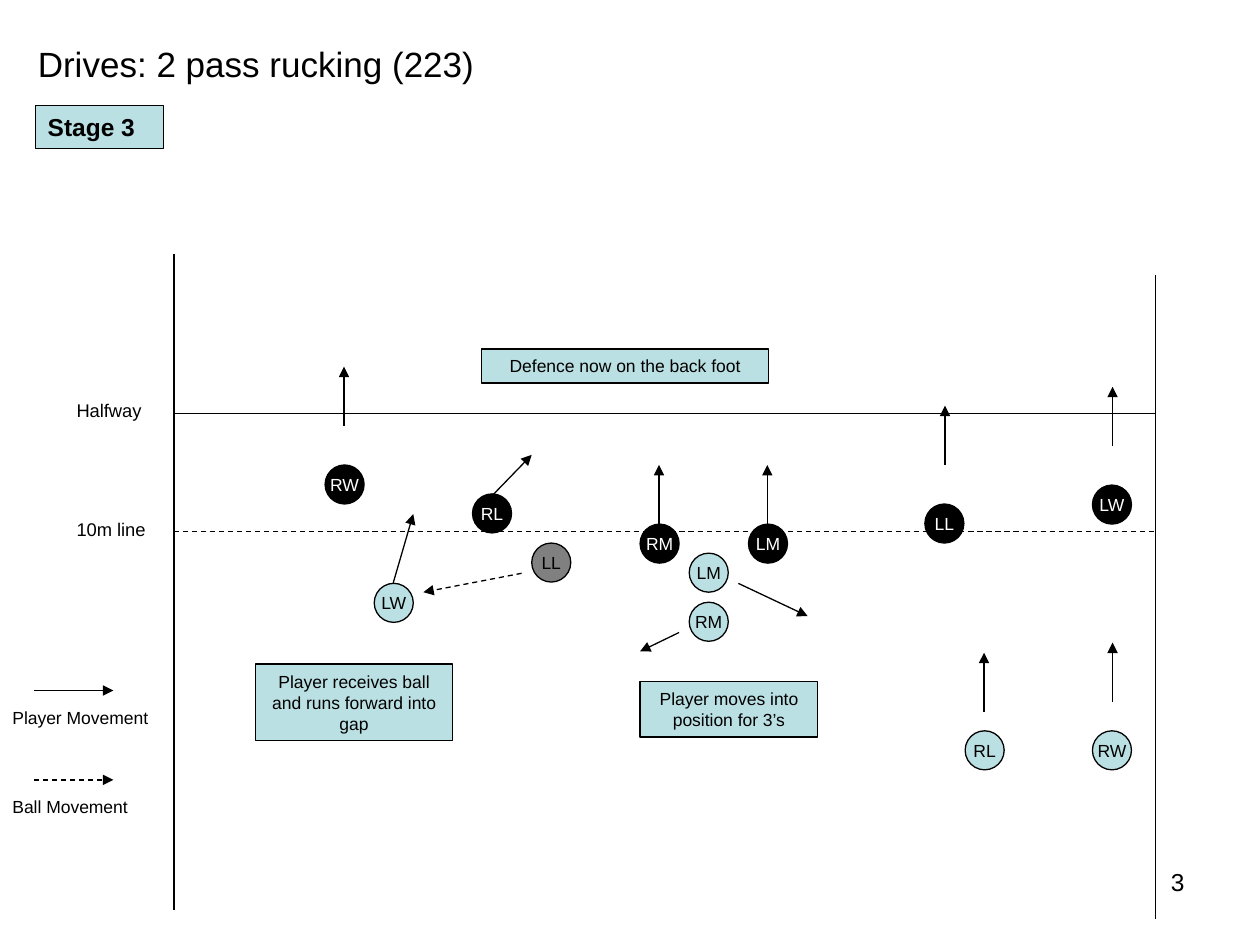
"""Build the stage 3 rucking drill slide."""
from lxml import etree
from pptx import Presentation
from pptx.dml.color import RGBColor
from pptx.enum.dml import MSO_LINE
from pptx.enum.shapes import MSO_CONNECTOR, MSO_SHAPE
from pptx.enum.text import MSO_ANCHOR, MSO_AUTO_SIZE, PP_ALIGN
from pptx.oxml.ns import qn
from pptx.util import Inches, Pt

DASH = MSO_LINE.DASH
STRAIGHT = MSO_CONNECTOR.STRAIGHT
OVAL, RECT = MSO_SHAPE.OVAL, MSO_SHAPE.RECTANGLE
TOP, MIDDLE = MSO_ANCHOR.TOP, MSO_ANCHOR.MIDDLE
GROW, FIXED = MSO_AUTO_SIZE.SHAPE_TO_FIT_TEXT, MSO_AUTO_SIZE.NONE
LEFT, CENTER, RIGHT = PP_ALIGN.LEFT, PP_ALIGN.CENTER, PP_ALIGN.RIGHT

THEME = {
    "font": "Arial", "line": 0.75,
    "black": RGBColor(0, 0, 0), "white": RGBColor(255, 255, 255),
    "aqua": RGBColor(0xBB, 0xE0, 0xE3), "gray": RGBColor(128, 128, 128),
    "title": 20, "stage": 14, "label": 10.5, "body": 10,
}
DOT = 0.31

TITLE = ("Drives: 2 pass rucking (223)", (0.2, 0.29, 3.69, 0.44))
STAGE = ("Stage 3", (0.28, 0.84, 1.02, 0.34))
NUMBER = ("3", (7.17, 6.83, 2.33, 0.52))
PITCH = [
    (1.38, 2.02, 1.38, 7.22, False),
    (1.38, 4.22, 9.17, 4.22, True),
    (9.17, 2.18, 9.17, 7.29, False),
    (1.38, 3.28, 9.17, 3.28, False),
]
TEAMS = [
    ("aqua", "black", [("LW", 2.97, 4.63), ("LM", 5.47, 4.39), ("RM", 5.47, 4.78),
                       ("RL", 7.66, 5.8), ("RW", 8.67, 5.8)]),
    ("gray", "black", [("LL", 4.22, 4.31)]),
    ("black", "white", [("LW", 8.67, 3.85), ("LL", 7.34, 4), ("LM", 5.94, 4.16),
                        ("RM", 5.08, 4.16), ("RL", 3.75, 3.92), ("RW", 2.58, 3.69)]),
]
RUNS = [
    (3.12, 4.63, 3.28, 4.08), (3.91, 3.93, 4.22, 3.61),
    (5.86, 4.63, 6.41, 4.89), (5.39, 5.02, 5.08, 5.17),
]
AHEAD = 0.47
STARTS = [(2.73, 3.38), (6.09, 4.16), (5.23, 4.16), (8.83, 3.54),
          (7.5, 3.69), (7.81, 5.65), (8.83, 5.57)]
PASS = (4.14, 4.55, 3.36, 4.7)
KEYS = [("Player Movement", 5.48, 1.28, False), ("Ball Movement", 6.19, 1.12, True)]
NOTES = [
    ("Player receives ball and runs forward into gap", (2.03, 5.27, 1.56, 0.61)),
    ("Defence now on the back foot", (3.82, 2.77, 2.28, 0.27)),
    ("Player moves into position for 3’s", (5.08, 5.41, 1.41, 0.44)),
]
LABELS = [("Halfway", (0.51, 3.12, 0.73, 0.28)), ("10m line", (0.51, 4.06, 0.76, 0.28))]


def write(shape, text, size, color="black", align=LEFT, anchor=TOP,
          wrap=False, fit=GROW, bold=False):
    frame = shape.text_frame
    frame.text = text
    frame.word_wrap = wrap
    frame.auto_size = fit
    frame.vertical_anchor = anchor
    para = frame.paragraphs[0]
    para.alignment = align
    font = para.runs[0].font
    font.name, font.size, font.bold = THEME["font"], Pt(THEME[size]), bold
    font.color.rgb = THEME[color]


def add_text(slide, text, box, size, **style):
    write(slide.shapes.add_textbox(*map(Inches, box)), text, size, **style)


def add_block(slide, kind, box, fill):
    shape = slide.shapes.add_shape(kind, *map(Inches, box))
    shape.shadow.inherit = False
    shape.fill.solid()
    shape.fill.fore_color.rgb = THEME[fill]
    shape.line.color.rgb = THEME["black"]
    shape.line.width = Pt(THEME["line"])
    return shape


def add_line(slide, ends, dashed=False, arrow=False):
    link = slide.shapes.add_connector(STRAIGHT, *map(Inches, ends))
    link.line.color.rgb = THEME["black"]
    link.line.width = Pt(THEME["line"])
    if dashed:
        link.line.dash_style = DASH
    props = link._element.spPr
    if arrow:
        etree.SubElement(props.find(qn("a:ln")), qn("a:tailEnd"), type="triangle")
    etree.SubElement(props, qn("a:effectLst"))


def main():
    deck = Presentation()
    deck.slide_width, deck.slide_height = Inches(10), Inches(7.5)
    slide = deck.slides.add_slide(deck.slide_layouts[5])

    text, box = TITLE
    title = slide.shapes.title
    title.left, title.top, title.width, title.height = map(Inches, box)
    write(title, text, "title")

    for *ends, dashed in PITCH:
        add_line(slide, ends, dashed)
    for fill, ink, players in TEAMS:
        for name, x, y in players:
            dot = add_block(slide, OVAL, (x, y, DOT, DOT), fill)
            write(dot, name, "body", ink, CENTER, MIDDLE, fit=FIXED)

    for ends in RUNS + [(x, y, x, y - AHEAD) for x, y in STARTS]:
        add_line(slide, ends, arrow=True)
    add_line(slide, PASS, dashed=True, arrow=True)

    for text, y, width, dashed in KEYS:
        add_line(slide, (0.27, y, 0.9, y), dashed, arrow=True)
        add_text(slide, text, (0, y + 0.08, width, 0.27), "body")
    for text, box in NOTES:
        note = add_block(slide, RECT, box, "aqua")
        write(note, text, "body", align=CENTER, anchor=MIDDLE, wrap=True)
    for text, box in LABELS:
        add_text(slide, text, box, "label")

    text, box = STAGE
    write(add_block(slide, RECT, box, "aqua"), text, "stage", wrap=True, bold=True)
    add_text(slide, *NUMBER, "stage", align=RIGHT, wrap=True, fit=FIXED)
    deck.save("out.pptx")


if __name__ == "__main__":
    main()
